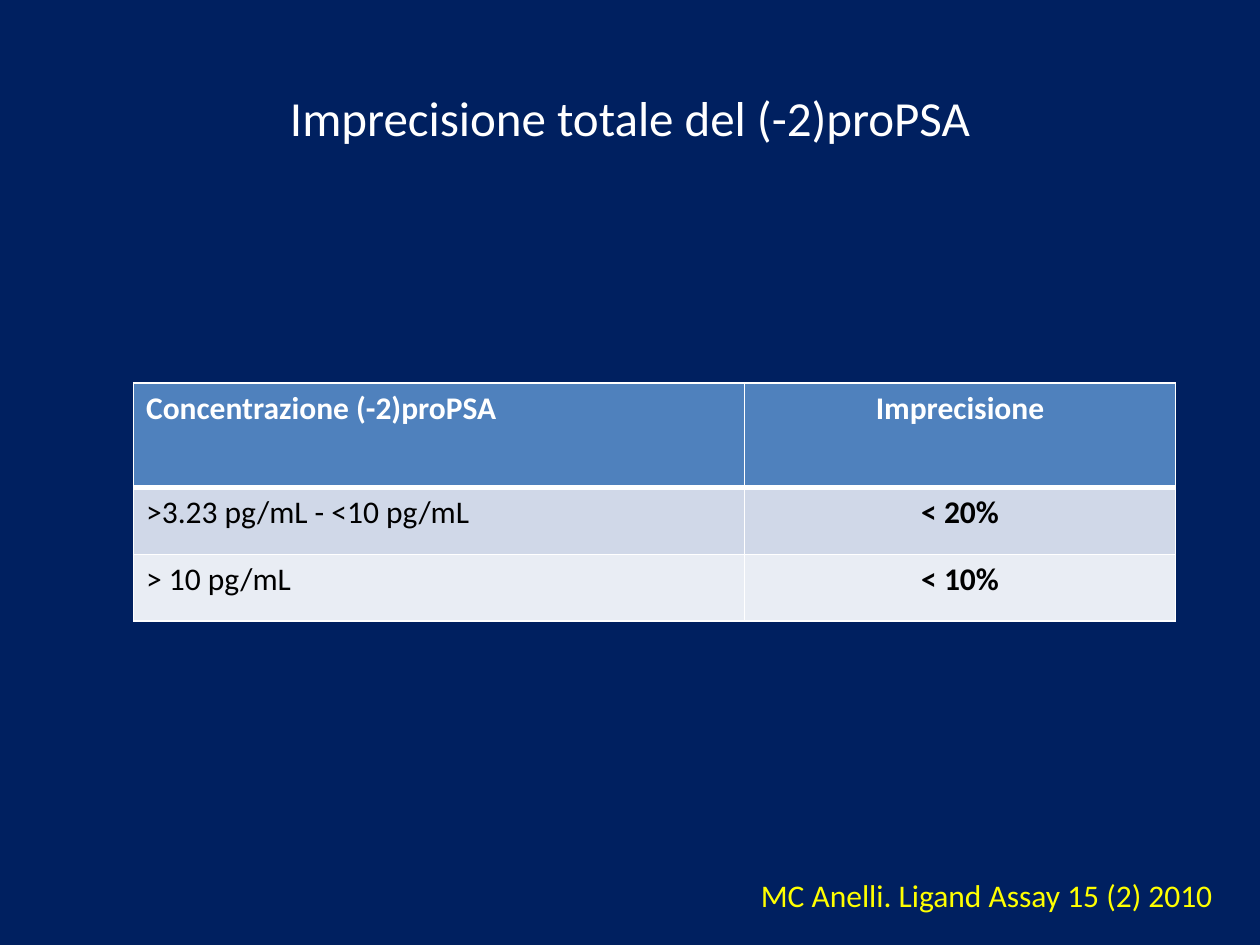
from typing import NamedTuple

from lxml.etree import SubElement
from pptx import Presentation
from pptx.dml.color import RGBColor as Rgb
from pptx.enum.text import MSO_ANCHOR as Anchor, MSO_AUTO_SIZE as Fit, PP_ALIGN as Align
from pptx.oxml.ns import qn
from pptx.util import Pt

FONT = "Calibri"
NAVY, WHITE, BLACK, YELLOW = "002060", "FFFFFF", "000000", "FFFF00"
COLS = (349.2, 246.24)


class Box(NamedTuple):
    left: float
    top: float
    width: float
    height: float


class Row(NamedTuple):
    range: str
    error: str
    height: float
    fill: str
    color: str = BLACK
    head: bool = False


ROWS = (
    Row("Concentrazione (-2)proPSA", "Imprecisione", 59.76, "4F81BD", WHITE, True),
    Row(">3.23 pg/mL - <10 pg/mL", "< 20%", 38.16, "D0D8E8"),
    Row("> 10 pg/mL", "< 10%", 38.16, "E9EDF4"),
)


def paint(fill, color: str) -> None:
    fill.solid()
    fill.fore_color.rgb = Rgb.from_string(color)


def write(frame, text: str, *, size: float = 18, color: str = WHITE,
          bold: bool = False, align=Align.LEFT) -> None:
    par = frame.paragraphs[0]
    par.alignment = align
    run = par.add_run()
    run.text = text
    font = run.font
    font.name, font.size, font.bold = FONT, Pt(size), bold
    font.color.rgb = Rgb.from_string(color)


def add_box(slide, box: Box, *, wrap: bool = True, anchor=Anchor.TOP):
    frame = slide.shapes.add_textbox(*map(Pt, box)).text_frame
    frame.word_wrap = wrap
    frame.vertical_anchor = anchor
    return frame


def edge(cell, side: str, width: float) -> None:
    """Draw one white border; call in the order L, R, T, B, before the fill."""
    line = SubElement(cell._tc.get_or_add_tcPr(), qn(f"a:ln{side}"), w=str(Pt(width)))
    fill = SubElement(line, qn("a:solidFill"))
    SubElement(fill, qn("a:srgbClr"), val=WHITE)


def add_grid(slide, left: float, top: float) -> None:
    box = Box(left, top, sum(COLS), sum(row.height for row in ROWS))
    table = slide.shapes.add_table(len(ROWS), len(COLS), *map(Pt, box)).table
    for col, width in zip(table.columns, COLS):
        col.width = Pt(width)
    for i, row in enumerate(ROWS):
        table.rows[i].height = Pt(row.height)
        above = 3 if i and ROWS[i - 1].head else 1
        below = 3 if row.head else 1
        for j, text in enumerate((row.range, row.error)):
            cell = table.cell(i, j)
            for side, width in zip("LRTB", (1, 1, above, below)):
                edge(cell, side, width)
            paint(cell.fill, row.fill)
            write(cell.text_frame, text, color=row.color, bold=row.head or j == 1,
                  align=Align.CENTER if j else Align.LEFT)


def main() -> None:
    deck = Presentation()
    deck.slide_width, deck.slide_height = Pt(720), Pt(540)
    slide = deck.slides.add_slide(deck.slide_layouts[6])
    paint(slide.background.fill, NAVY)

    title = add_box(slide, Box(36, 21.6, 648, 90), anchor=Anchor.MIDDLE)
    write(title, "Imprecisione totale del (-2)proPSA", size=28, align=Align.CENTER)
    add_grid(slide, 76.32, 218.88)
    credit = add_box(slide, Box(427.68, 496.8, 275.76, 28.8), wrap=False)
    credit.auto_size = Fit.SHAPE_TO_FIT_TEXT
    write(credit, "MC Anelli. Ligand Assay 15 (2) 2010", color=YELLOW)

    deck.save("out.pptx")


if __name__ == "__main__":
    main()
